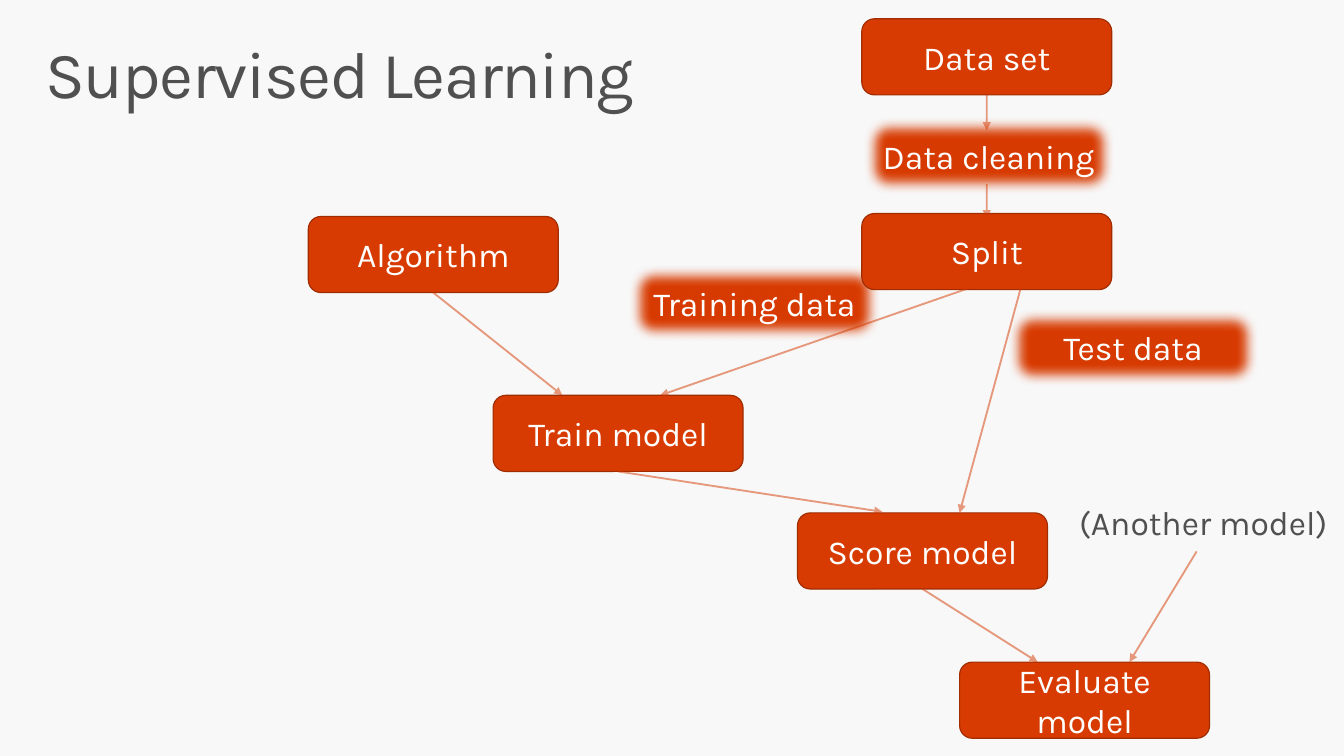
import pptx
import pptx.util
import pptx.dml.color
import pptx.enum.shapes
import pptx.enum.text
import pptx.oxml
import pptx.oxml.ns

WIDE, HIGH = 13.6, 7.65
SIZE = (18.6, 10.07)  # node size, percent of the slide
NS = pptx.oxml.ns.nsdecls("a")
SOFT = f'<a:effectLst {NS}><a:softEdge rad="112500"/></a:effectLst>'
FLAT = f"<a:effectLst {NS}/>"
HEAD = f'<a:tailEnd {NS} type="triangle"/>'
FADE = f'<a:alpha {NS} val="50000"/>'

# Name: left, top (percent of the slide), soft edge
NODES = {
    "Data set": (64.12, 2.48, False),
    "Training data": (46.84, 35.03, True),
    "Test data": (75, 40.92, True),
    "Algorithm": (22.94, 28.63, False),
    "Train model": (36.69, 52.29, False),
    "Score model": (59.34, 67.84, False),
    "Evaluate model": (71.4, 87.58, False),
    "Data cleaning": (64.26, 15.56, True),
    "Split": (64.12, 28.24, False),
}
# Start (a node's bottom middle, or a point) and end point
LINKS = [
    ("Algorithm", (41.84, 52.29)),
    ((72.21, 38.04), (49.12, 52.29)),
    ((75.96, 38.04), (71.4, 67.84)),
    ("Score model", (77.21, 87.58)),
    ("Train model", (65.66, 67.71)),
    ((89.04, 72.94), (84.04, 87.58)),
    ("Data set", (73.42, 17.25)),
    ((73.42, 24.31), (73.42, 28.89)),
]


def hue(code):
    return pptx.dml.color.RGBColor.from_string(code)


def place(x, y):
    """Turn percent of the slide into lengths."""
    return (pptx.util.Inches(WIDE * x / 100),
            pptx.util.Inches(HIGH * y / 100))


def style(item, form):
    for key, value in form.items():
        setattr(item, key, value)


def write(shape, text, size, color, frame, para):
    style(shape.text_frame, frame)
    line = shape.text_frame.paragraphs[0]
    style(line, para)
    run = line.add_run()
    run.text = text
    style(run.font, {"name": "Karla", "size": pptx.util.Pt(size)})
    run.font.color.rgb = hue(color)
    return run


def label(slide, box, text, size, frame, para):
    shape = slide.shapes.add_textbox(*place(*box[:2]), *place(*box[2:]))
    return write(shape, text, size, "505050", frame, para)


def node(slide, box, text, soft):
    kind = pptx.enum.shapes.MSO_SHAPE.ROUNDED_RECTANGLE
    shape = slide.shapes.add_shape(kind, *place(*box[:2]), *place(*box[2:]))
    shape.fill.solid()
    shape.fill.fore_color.rgb = hue("D83B01")
    shape.line.color.rgb = hue("A02C01")
    shape.line.width = pptx.util.Pt(0.85)
    if soft:
        shape._element.spPr.append(pptx.oxml.parse_xml(SOFT))
    else:
        shape.shadow.inherit = False
    write(shape, text, 24.5, "FFFFFF",
          {"word_wrap": True,
           "vertical_anchor": pptx.enum.text.MSO_ANCHOR.MIDDLE},
          {"alignment": pptx.enum.text.PP_ALIGN.CENTER})
    return shape


def link(slide, start, end, nodes):
    kind = pptx.enum.shapes.MSO_CONNECTOR.STRAIGHT
    first = end if start in nodes else start
    line = slide.shapes.add_connector(kind, *place(*first), *place(*end))
    if start in nodes:
        line.begin_connect(nodes[start], 2)
    line.line.color.rgb = hue("D43900")
    line.line.width = pptx.util.Pt(1.35)
    props = line._element.spPr
    tint = props.find(".//" + pptx.oxml.ns.qn("a:srgbClr"))
    tint.append(pptx.oxml.parse_xml(FADE))
    line.line._get_or_add_ln().append(pptx.oxml.parse_xml(HEAD))
    props.append(pptx.oxml.parse_xml(FLAT))


def title(slide, box):
    side, edge = pptx.util.Inches(0.16), pptx.util.Inches(0.1)
    run = label(slide, box, "Supervised Learning", 48,
                {"word_wrap": True, "margin_left": side, "margin_right": side,
                 "margin_top": edge, "margin_bottom": edge},
                {"line_spacing": 0.9})
    run.font._element.set("spc", "-100")


def flow(slide):
    nodes = {}
    for name, (x, y, soft) in NODES.items():
        nodes[name] = node(slide, (x, y, *SIZE), name, soft)
    for start, end in LINKS:
        link(slide, start, end, nodes)
    label(slide, (79.56, 65.75, 20.07, 6.67), "(Another model)", 24.5,
          {"word_wrap": False}, {})


def main():
    deck = pptx.Presentation()
    style(deck, {"slide_width": pptx.util.Inches(WIDE),
                 "slide_height": pptx.util.Inches(HIGH)})
    slide = deck.slides.add_slide(deck.slide_layouts[6])
    slide.background.fill.solid()
    slide.background.fill.fore_color.rgb = hue("F8F8F8")
    title(slide, (2.21, 4.18, 95.59, 13.07))
    flow(slide)
    deck.save("out.pptx")


if __name__ == "__main__":
    main()
